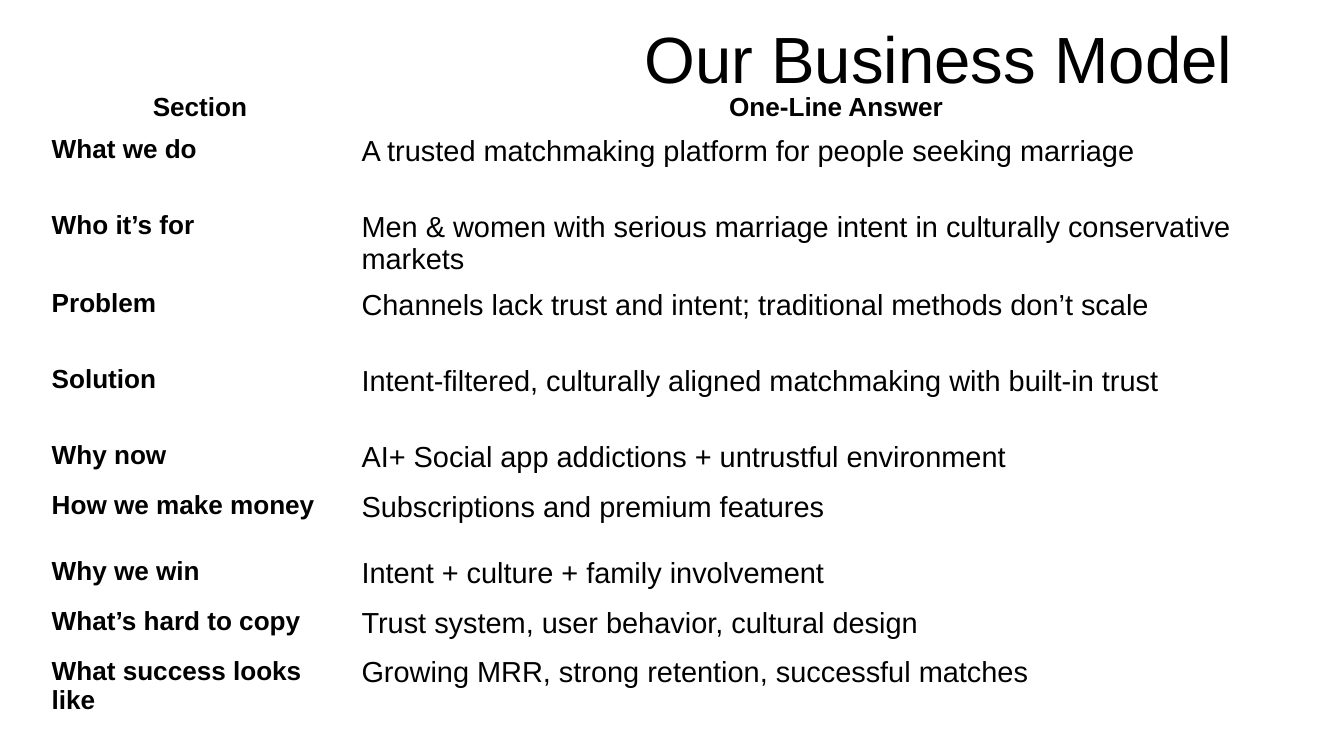
from dataclasses import dataclass

from pptx import Presentation
from pptx.dml.color import RGBColor
from pptx.enum.text import MSO_ANCHOR, MSO_AUTO_SIZE, PP_ALIGN
from pptx.util import Inches, Pt


@dataclass(frozen=True)
class Theme:
    """Colours, type sizes and spacing of the slide."""
    font: str = "Arial"
    ink: RGBColor = RGBColor(0, 0, 0)
    paper: RGBColor = RGBColor(255, 255, 255)
    title: int = 70
    label: int = 28
    answer: int = 31
    leading: float = 1.15
    inset: float = 0.1


THEME = Theme()
WIDTH, HEIGHT = 20, 11.25
COLUMNS = (4.61, 14.32)
HEADER_ROW, SHORT, MEDIUM, TALL = 0.7, 0.74, 0.99, 1.13
HEADINGS = ("Section", "One-Line Answer")
MODEL = (
    ("What we do", "A trusted matchmaking platform for people seeking marriage", TALL),
    ("Who it’s for", "Men & women with serious marriage intent in culturally conservative markets", TALL),
    ("Problem", "Channels lack trust and intent; traditional methods don’t scale", TALL),
    ("Solution", "Intent-filtered, culturally aligned matchmaking with built-in trust", TALL),
    ("Why now", "AI+ Social app addictions + untrustful environment", SHORT),
    ("How we make money", "Subscriptions and premium features", MEDIUM),
    ("Why we win", "Intent + culture + family involvement", SHORT),
    ("What’s hard to copy", "Trust system, user behavior, cultural design", SHORT),
    ("What success looks like", "Growing MRR, strong retention, successful matches", MEDIUM),
)


def set_insets(holder):
    """Give a cell or a text frame equal margins on all sides."""
    for side in ("left", "top", "right", "bottom"):
        setattr(holder, f"margin_{side}", Inches(THEME.inset))


def write(frame, text, size, bold=False, align=PP_ALIGN.LEFT, leading=None):
    """Write one styled paragraph into a text frame."""
    para = frame.paragraphs[0]
    para.text = text
    para.alignment = align
    para.line_spacing = leading
    para.font.name = THEME.font
    para.font.size = Pt(size)
    para.font.bold = bold
    para.font.color.rgb = THEME.ink


def add_title(page, text):
    """Place the large title at the upper right."""
    box = page.shapes.add_textbox(Inches(9.49), 0, Inches(10.39), Inches(1.38))
    frame = box.text_frame
    frame.word_wrap = True
    frame.auto_size = MSO_AUTO_SIZE.SHAPE_TO_FIT_TEXT
    set_insets(frame)
    write(frame, text, THEME.title, leading=THEME.leading)


def fill_cell(cell, text, size, **style):
    """Write a clear, top-anchored table cell."""
    cell.fill.background()
    cell.vertical_anchor = MSO_ANCHOR.TOP
    set_insets(cell)
    write(cell.text_frame, text, size, **style)


def add_model_table(page):
    """Build the table of sections and their one-line answers."""
    heights = [HEADER_ROW] + [height for _, _, height in MODEL]
    table = page.shapes.add_table(
        len(heights), len(COLUMNS), Inches(0.67), Inches(1.21),
        Inches(sum(COLUMNS)), Inches(sum(heights))).table
    table.first_row = table.horz_banding = False
    for column, width in zip(table.columns, COLUMNS):
        column.width = Inches(width)
    for row, height in zip(table.rows, heights):
        row.height = Inches(height)
    for index, heading in enumerate(HEADINGS):
        fill_cell(table.cell(0, index), heading, THEME.label, bold=True,
                  align=PP_ALIGN.CENTER, leading=THEME.leading)
    for index, (section, answer, _) in enumerate(MODEL, start=1):
        fill_cell(table.cell(index, 0), section, THEME.label, bold=True)
        fill_cell(table.cell(index, 1), answer, THEME.answer)


def main():
    """Build and save the slide."""
    deck = Presentation()
    deck.slide_width, deck.slide_height = Inches(WIDTH), Inches(HEIGHT)
    page = deck.slides.add_slide(deck.slide_layouts[6])
    page.background.fill.solid()
    page.background.fill.fore_color.rgb = THEME.paper
    add_model_table(page)
    add_title(page, "Our Business Model")
    deck.save("out.pptx")


if __name__ == "__main__":
    main()
